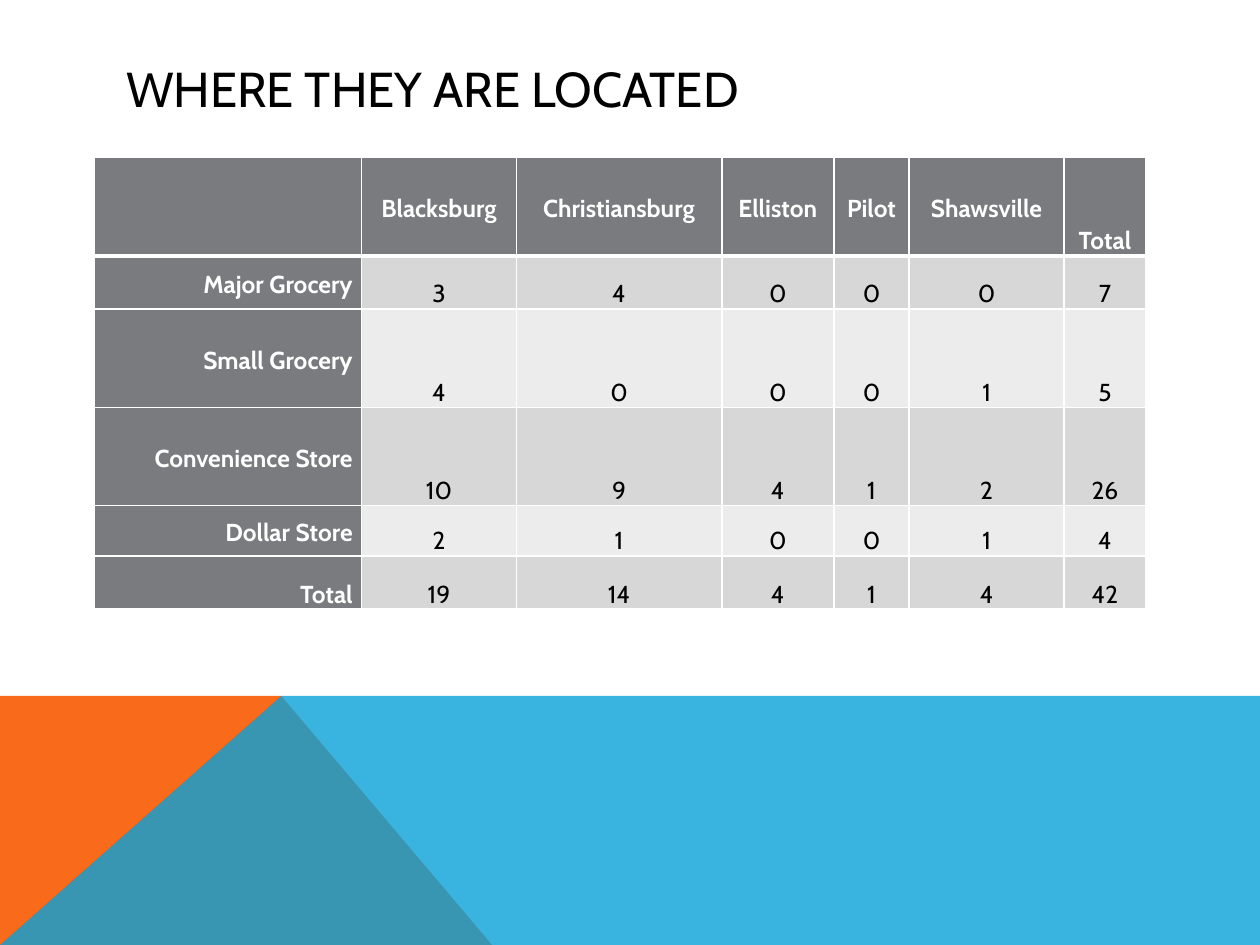
"""Build a slide that tabulates food stores by town."""
from dataclasses import dataclass

from lxml import etree
from pptx import Presentation
from pptx import util as u
from pptx.dml.color import RGBColor
from pptx.enum import text
from pptx.oxml import ns


@dataclass(frozen=True)
class Theme:
    """Hold the colours and type sizes of the slide."""
    font: str = "Cabin"
    head: int = 28
    body: int = 14
    ink: str = "000000"
    white: str = "FFFFFF"
    gray: str = "797B7E"
    dark: str = "D7D7D8"
    light: str = "ECECEC"
    flame: str = "F96A1B"
    blue: str = "08A1D9"


THEME = Theme()
TOWNS = ["", "Blacksburg", "Christiansburg", "Elliston", "Pilot", "Shawsville", "Total"]
STORES = [
    ["Major Grocery", 3, 4, 0, 0, 0, 7],
    ["Small Grocery", 4, 0, 0, 0, 1, 5],
    ["Convenience Store", 10, 9, 4, 1, 2, 26],
    ["Dollar Store", 2, 1, 0, 0, 1, 4],
    ["Total", 19, 14, 4, 1, 4, 42],
]
WIDTHS = [5.38, 3.12, 4.14, 2.26, 1.52, 3.12, 1.65]
HEIGHTS = [1.98, 1.07, 1.98, 1.98, 1.02, 1.07]
WIDE, HIGH = 25.4, 19.05
TOP, PEAK, FOOT = 14.03, 5.67, 9.92


def paint(fill, tone):
    """Give a fill one solid colour."""
    fill.solid()
    fill.fore_color.rgb = RGBColor.from_string(tone)


def style(para, size, tone, bold=False):
    """Format every run of a paragraph."""
    for run in para.runs:
        run.font.name = THEME.font
        run.font.size = u.Pt(size)
        run.font.bold = bold
        run.font.color.rgb = RGBColor.from_string(tone)


def add_title(slide, label):
    """Place and format the title."""
    title = slide.shapes.title
    title.left, title.top = u.Cm(2.29), u.Cm(1.02)
    title.width, title.height = u.Cm(20.88), u.Cm(1.52)
    frame = title.text_frame
    frame.text = label
    frame.vertical_anchor = text.MSO_ANCHOR.MIDDLE
    frame.paragraphs[0].alignment = text.PP_ALIGN.LEFT
    style(frame.paragraphs[0], THEME.head, THEME.ink)


def add_band(slide, points, tone, alpha=100):
    """Draw a filled polygon, see-through where alpha is below 100."""
    first, *rest = [(u.Cm(x), u.Cm(y)) for x, y in points]
    pen = slide.shapes.build_freeform(*first)
    pen.add_line_segments(rest, close=True)
    band = pen.convert_to_shape()
    band.shadow.inherit = False
    band.line.fill.background()
    paint(band.fill, tone)
    if alpha < 100:
        color = band.fill._xPr.find(".//" + ns.qn("a:srgbClr"))
        etree.SubElement(color, ns.qn("a:alpha"), val=str(alpha * 1000))


def add_edges(cell, row):
    """Rule a cell in white, with a thick line under the header."""
    props = cell._tc.get_or_add_tcPr()
    thick = {"T": row == 1, "B": row == 0}
    for side in "LRTB":
        width = u.Pt(3 if thick.get(side) else 1)
        edge = etree.SubElement(props, ns.qn("a:ln" + side), w=str(width))
        fill = etree.SubElement(edge, ns.qn("a:solidFill"))
        etree.SubElement(fill, ns.qn("a:srgbClr"), val=THEME.white)


def fill_cell(cell, label, row, col, last):
    """Write and format one cell by its place in the grid."""
    head = row == 0 or col == 0
    add_edges(cell, row)
    paint(cell.fill, THEME.gray if head else THEME.dark if row % 2 else THEME.light)
    cell.margin_left = cell.margin_right = u.Cm(0.18)
    cell.margin_top = cell.margin_bottom = 0
    middle = head and (row, col) not in [(0, last[1]), (last[0], 0)]
    cell.vertical_anchor = text.MSO_ANCHOR.MIDDLE if middle else text.MSO_ANCHOR.BOTTOM
    cell.text_frame.text = str(label)
    para = cell.text_frame.paragraphs[0]
    para.alignment = text.PP_ALIGN.CENTER if col else text.PP_ALIGN.RIGHT
    para.line_spacing = 1.15
    style(para, THEME.body, THEME.white if head else THEME.ink, head)


def add_grid(slide, rows):
    """Add the table of store counts."""
    size = len(rows), len(rows[0])
    table = slide.shapes.add_table(
        *size, u.Cm(1.91), u.Cm(3.18), u.Cm(sum(WIDTHS)), u.Cm(sum(HEIGHTS))
    ).table
    for col, width in zip(table.columns, WIDTHS):
        col.width = u.Cm(width)
    for row, height in zip(table.rows, HEIGHTS):
        row.height = u.Cm(height)
    last = size[0] - 1, size[1] - 1
    for r, row in enumerate(rows):
        for c, label in enumerate(row):
            fill_cell(table.cell(r, c), label, r, c, last)


def main():
    """Build and save the slide."""
    deck = Presentation()
    deck.slide_width, deck.slide_height = u.Cm(WIDE), u.Cm(HIGH)
    slide = deck.slides.add_slide(deck.slide_layouts[5])
    add_band(slide, [(0, HIGH), (0, TOP), (PEAK, TOP), (FOOT, HIGH)], THEME.flame)
    add_band(slide, [(0, HIGH), (PEAK, TOP), (WIDE, TOP), (WIDE, HIGH)], THEME.blue, 80)
    add_title(slide, "WHERE THEY ARE LOCATED")
    add_grid(slide, [TOWNS, *STORES])
    deck.save("out.pptx")


if __name__ == "__main__":
    main()
